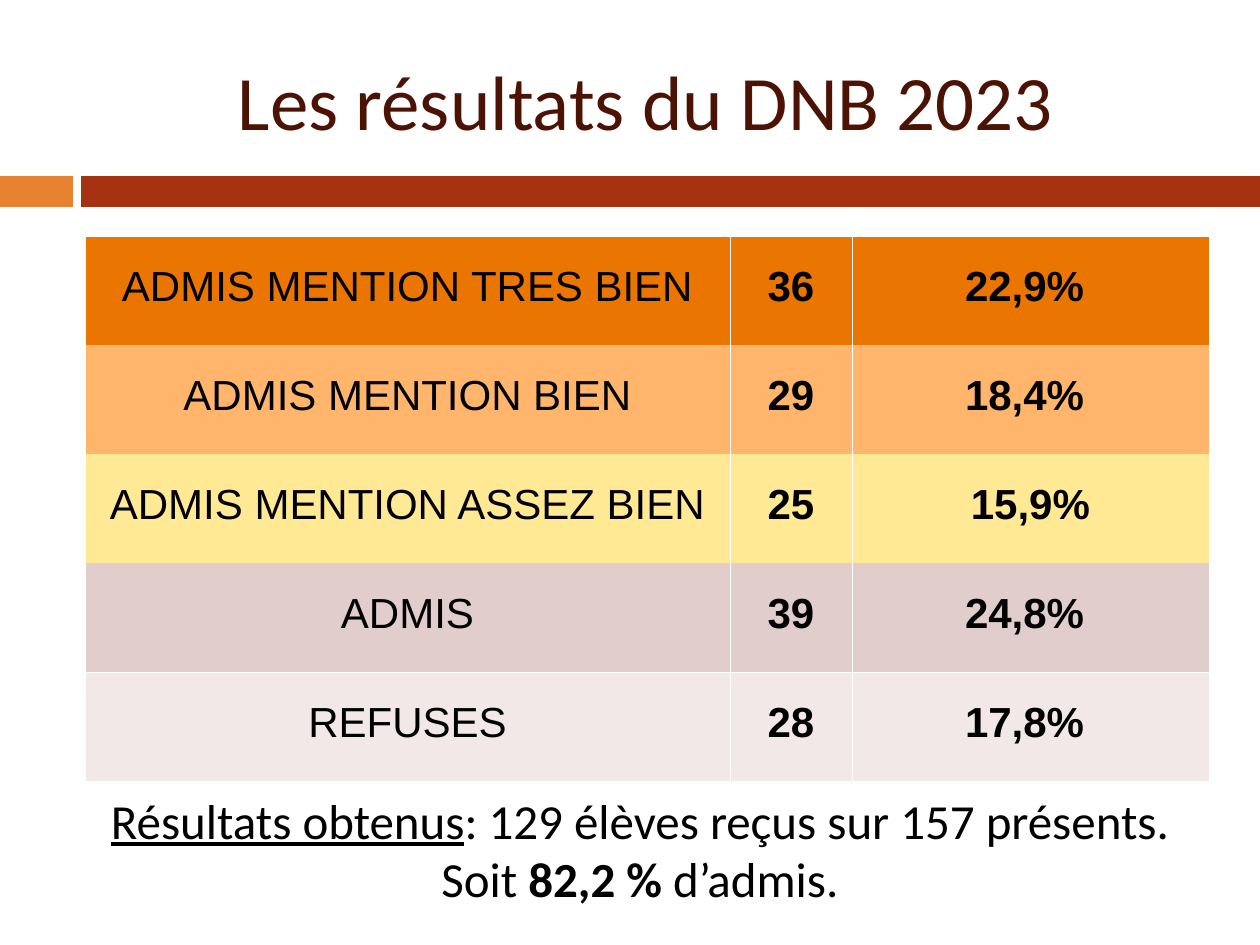
from lxml import etree
from pptx import Presentation
from pptx.dml.color import RGBColor
from pptx.enum.shapes import MSO_SHAPE
from pptx.enum.text import MSO_ANCHOR, PP_ALIGN
from pptx.oxml.ns import qn
from pptx.util import Emu, Pt

RECT = MSO_SHAPE.RECTANGLE
MID, TOP = MSO_ANCHOR.MIDDLE, MSO_ANCHOR.TOP
CENTER = PP_ALIGN.CENTER

# Content
TITLE = "Les résultats du DNB 2023"
ROWS = [
    ("ADMIS MENTION TRES BIEN", "36", "22,9% ", "best"),
    ("ADMIS MENTION BIEN", "29", "18,4% ", "good"),
    ("ADMIS MENTION ASSEZ BIEN", "25", "15,9%", "fair"),
    ("ADMIS", "39", "24,8% ", "pass"),
    ("REFUSES", "28", "17,8% ", "fail"),
]
# Each run: text, bold, underline
SUMMARY = [
    [("Résultats obtenus", False, True),
     (": 129 élèves reçus sur 157 présents. ", False, False)],
    [("Soit ", False, False), ("82,2 % ", True, False),
     ("d’admis. ", False, False)],
]
COLORS = {
    "accent": "E68230", "band": "A63212", "title": "4C1304",
    "text": "000000", "line": "FFFFFF",
    "best": "EA7500", "good": "FFB66C", "fair": "FFE994",
    "pass": "E1CDCC", "fail": "F1E8E7",
}

# Layout in px
WIDTH, HEIGHT = 1260, 945
LEFT = 85
BARS = [(0, 73, "accent"), (81, WIDTH - 81, "band")]
BAR_TOP, BAR_HIGH = 176, 31
TABLE_TOP, ROW_HIGH = 236, 109
COLS = [645, 122, 357]
PAD = 6
HAIR = 0.23


def px(n):
    return Emu(round(n * 914400 / 126))


def rgb(name):
    return RGBColor.from_string(COLORS[name])


def put_text(frame, paras, font="Calibri", size=28, color="text", space=None):
    for i, runs in enumerate(paras):
        para = frame.paragraphs[0] if i == 0 else frame.add_paragraph()
        para.alignment = CENTER
        if space:
            para.line_spacing = space
        for text, bold, under in runs:
            run = para.add_run()
            run.text = text
            run.font.name, run.font.size = font, Pt(size)
            run.font.bold, run.font.underline = bold, under
            run.font.color.rgb = rgb(color)


def add_box(slide, box, paras, anchor=TOP, **style):
    frame = slide.shapes.add_textbox(*map(px, box)).text_frame
    frame.word_wrap = True
    frame.vertical_anchor = anchor
    put_text(frame, paras, **style)


def set_edges(cell, ruled):
    props = cell._tc.get_or_add_tcPr()
    for i, side in enumerate("LRTB"):
        line = etree.Element(qn(f"a:ln{side}"), w=str(Pt(HAIR)))
        if side in ruled:
            fill = etree.SubElement(line, qn("a:solidFill"))
            etree.SubElement(fill, qn("a:srgbClr"), val=COLORS["line"])
        else:
            etree.SubElement(line, qn("a:noFill"))
        props.insert(i, line)


def add_grid(slide):
    table = slide.shapes.add_table(
        len(ROWS), len(COLS), px(LEFT), px(TABLE_TOP),
        px(sum(COLS)), px(ROW_HIGH * len(ROWS))).table
    table.first_row = table.horz_banding = False
    for col, wide in zip(table.columns, COLS):
        col.width = px(wide)
    last = len(ROWS) - 1
    for r, (*texts, color) in enumerate(ROWS):
        table.rows[r].height = px(ROW_HIGH)
        # Only the last row is ruled above and below
        ruled = "LR" + "T" * (r in (0, last)) + "B" * (r >= last - 1)
        for c, text in enumerate(texts):
            cell = table.cell(r, c)
            cell.fill.solid()
            cell.fill.fore_color.rgb = rgb(color)
            cell.vertical_anchor = MID
            cell.margin_left = cell.margin_right = px(PAD)
            cell.margin_top = cell.margin_bottom = px(PAD)
            set_edges(cell, ruled)
            put_text(cell.text_frame, [[(text, c > 0, False)]],
                     font="Arial", size=24, space=0.8)


def main():
    deck = Presentation()
    deck.slide_width, deck.slide_height = px(WIDTH), px(HEIGHT)
    slide = deck.slides.add_slide(deck.slide_layouts[6])

    # Bars under the title
    for left, wide, color in BARS:
        bar = slide.shapes.add_shape(
            RECT, px(left), px(BAR_TOP), px(wide), px(BAR_HIGH))
        bar.shadow.inherit = False
        bar.fill.solid()
        bar.fill.fore_color.rgb = rgb(color)
        bar.line.fill.background()

    # Title, results and summary
    add_box(slide, (LEFT, 32, 1122, 136), [[(TITLE, False, False)]],
            anchor=MID, size=44, color="title")
    add_grid(slide)
    add_box(slide, (15, 784, 1261, 130), SUMMARY)
    deck.save("out.pptx")


if __name__ == "__main__":
    main()
